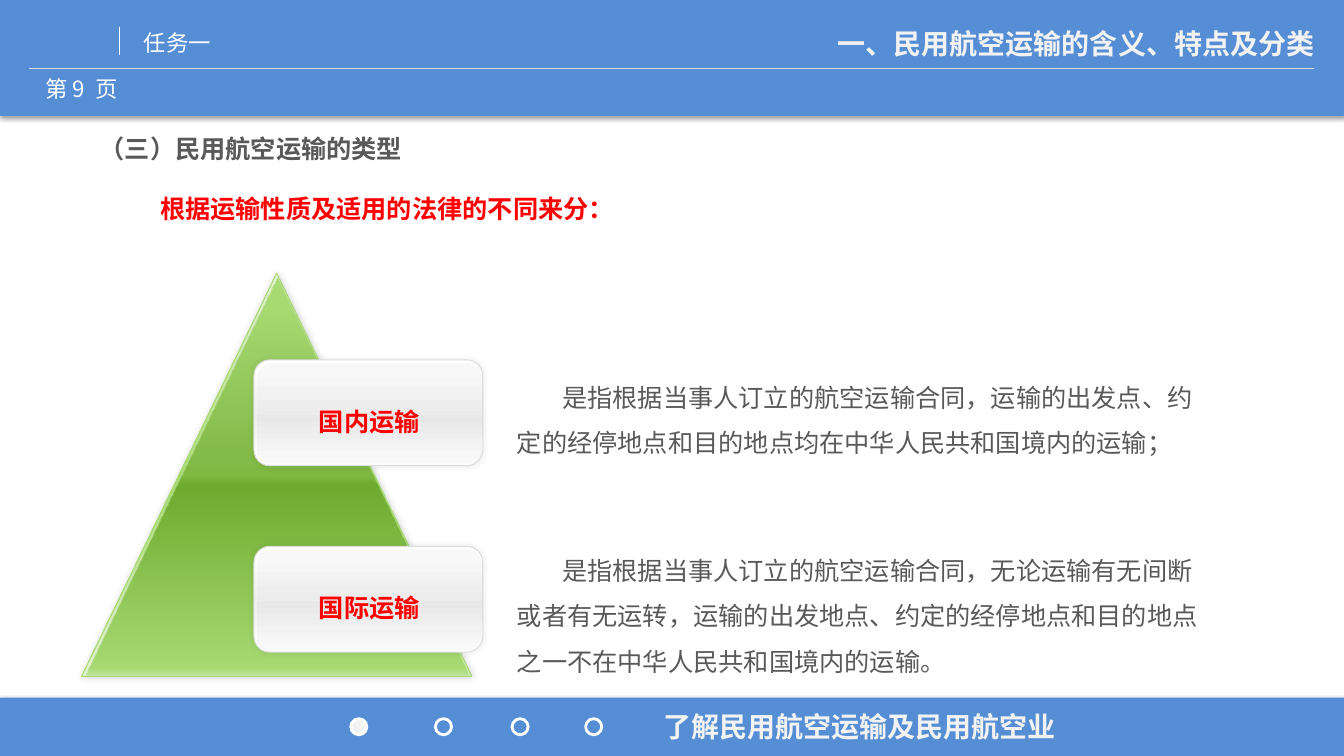
from lxml.etree import SubElement
from pptx import Presentation
from pptx.dml.color import RGBColor
from pptx.enum.shapes import MSO_CONNECTOR as CONNECTOR, MSO_SHAPE as SHAPE
from pptx.enum.text import MSO_ANCHOR as ANCHOR, PP_ALIGN as ALIGN
from pptx.oxml.ns import qn
from pptx.util import Inches, Pt

# Grid of 40 columns by 30 rows
WIDTH, HEIGHT = Inches(13.33), Inches(7.5)
COL, ROW = WIDTH / 40, HEIGHT / 30

BLUE = RGBColor(0x55, 0x8E, 0xD5)
WHITE = RGBColor(0xFF, 0xFF, 0xFF)
OFF_WHITE = RGBColor(0xF2, 0xF2, 0xF2)
RULE_GREY = RGBColor(0xD9, 0xD9, 0xD9)
EDGE_GREY = RGBColor(0xDD, 0xDD, 0xDD)
TEXT_GREY = RGBColor(0x59, 0x59, 0x59)
RED = RGBColor(0xFF, 0x00, 0x00)
BLACK = RGBColor(0x00, 0x00, 0x00)
LIGHT_GREEN = RGBColor(0xA8, 0xDA, 0x73)
DARK_GREEN = RGBColor(0x6D, 0xAA, 0x2D)
PALE_GREEN = RGBColor(0xE2, 0xF3, 0xD0)
BASE_GREEN = RGBColor(0xC5, 0xE6, 0xA2)
SILVERS = [RGBColor(*[level] * 3) for level in (0xF8, 0xEC, 0xE8, 0xF9)]
RIM_GREY = RGBColor(0xF0, 0xF0, 0xF0)

# Gradient stops: position %, colour, opacity %
GREEN_RIM = [(0, PALE_GREEN, 100), (52, LIGHT_GREEN, 100), (100, PALE_GREEN, 100)]
GREEN_FACE = [(8, LIGHT_GREEN, 100), (50, DARK_GREEN, 70), (52, DARK_GREEN, 100),
              (98, LIGHT_GREEN, 100), (100, BASE_GREEN, 100)]
SILVER_RIM = [(0, WHITE, 100), (52, RIM_GREY, 100), (100, WHITE, 100)]
SILVER_FACE = [(place, grey, 100)
               for place, grey in zip((8, 50, 52, 98, 100), SILVERS + [WHITE])]

# Shadows: opacity %, blur pt, distance pt
BAND_SHADOW, TRIANGLE_SHADOW, CARD_SHADOW = (35, 3.1, 1.8), (18, 5, 0), (8, 5, 0)

FONT = "Noto Sans CJK SC"
PARAGRAPH_INDENT = Inches(0.45)
CARD_STEP = 7.4


def grid(col, row, cols, rows):
    return [round(n) for n in (col * COL, row * ROW, cols * COL, rows * ROW)]


def add_color(parent, color, opacity):
    node = SubElement(parent, qn("a:srgbClr"), val=str(color))
    if opacity < 100:
        SubElement(node, qn("a:alpha"), val=str(opacity * 1000))


def add_gradient(shape, stops):
    shape.fill.gradient()
    shape.fill.gradient_angle = 270
    stop_list = shape.element.spPr.find(".//" + qn("a:gsLst"))
    for old in list(stop_list):
        stop_list.remove(old)
    for place, color, opacity in stops:
        stop = SubElement(stop_list, qn("a:gs"), pos=str(place * 1000))
        add_color(stop, color, opacity)


def add_shadow(shape, opacity, blur, distance):
    effects = shape.element.spPr.find(qn("a:effectLst"))
    outer = SubElement(effects, qn("a:outerShdw"), blurRad=str(Pt(blur)),
                       dist=str(Pt(distance)), dir="5400000", rotWithShape="0")
    add_color(outer, BLACK, opacity)


def add_figure(slide, preset, box, fill=None, line=None, line_width=0.75, shadow=None):
    """fill is a colour, a list of gradient stops, or None for hollow."""
    figure = slide.shapes.add_shape(preset, *grid(*box))
    figure.shadow.inherit = False
    if fill is None:
        figure.fill.background()
    elif isinstance(fill, list):
        add_gradient(figure, fill)
    else:
        figure.fill.solid()
        figure.fill.fore_color.rgb = fill
    if line is None:
        figure.line.fill.background()
    else:
        figure.line.color.rgb = line
        figure.line.width = Pt(line_width)
    if shadow:
        add_shadow(figure, *shadow)
    return figure


def add_rule(slide, start, end, color):
    x1, y1, x2, y2 = grid(*start, *end)
    rule = slide.shapes.add_connector(CONNECTOR.STRAIGHT, x1, y1, x2, y2)
    rule.line.color.rgb = color
    rule.line.width = Pt(0.75)
    SubElement(rule.element.spPr, qn("a:effectLst"))


def write(frame, text, size, color, bold=False, align=ALIGN.LEFT, spacing=1.0,
          indent=0, font=FONT):
    paragraph = frame.paragraphs[0]
    run = paragraph.add_run()
    run.text = text
    paragraph.alignment = align
    paragraph.line_spacing = spacing
    paragraph.font.size = Pt(size)
    paragraph.font.bold = bold
    paragraph.font.color.rgb = color
    paragraph.font.name = font
    # East Asian typeface and first-line indent
    SubElement(run.font._element, qn("a:ea"), typeface=FONT)
    run.font.size, run.font.bold, run.font.name = Pt(size), bold, font
    run.font.color.rgb = color
    if indent:
        properties = paragraph._p.get_or_add_pPr()
        properties.set("marL", "0")
        properties.set("indent", str(indent))


def add_text(slide, box, text, size, color, **style):
    frame = slide.shapes.add_textbox(*grid(*box)).text_frame
    frame.word_wrap = True
    write(frame, text, size, color, **style)


def add_card(slide, label, row):
    rim = add_figure(slide, SHAPE.ROUNDED_RECTANGLE, (7.56, row, 6.81, 4.2),
                     SILVER_RIM, EDGE_GREY, shadow=CARD_SHADOW)
    face = add_figure(slide, SHAPE.ROUNDED_RECTANGLE, (7.65, row + 0.12, 6.69, 4.04),
                      SILVER_FACE)
    for layer in (rim, face):
        layer.adjustments[0] = 0.15
    face.text_frame.word_wrap = False
    face.text_frame.vertical_anchor = ANCHOR.MIDDLE
    write(face.text_frame, label, 18, RED, bold=True, align=ALIGN.CENTER,
          spacing=1.5, font="Calibri")


def add_frame(slide):
    # Header and footer bands
    for row, rows in ((0, 4.6), (27.68, 2.32)):
        add_figure(slide, SHAPE.RECTANGLE, (0, row, 40, rows), BLUE, shadow=BAND_SHADOW)
    add_rule(slide, (0.87, 2.72), (39.12, 2.72), RULE_GREY)
    add_rule(slide, (3.57, 1.08), (3.57, 2.2), WHITE)
    # Progress dots, the first one filled
    for dot, col in enumerate((10.44, 12.96, 15.24, 17.43)):
        add_figure(slide, SHAPE.OVAL, (col, 28.52, 0.48, 0.64),
                   None if dot else OFF_WHITE, WHITE, 2)
    add_text(slide, (19.44, 27.96, 13.92, 1.76), "了解民用航空运输及民用航空业",
             20, OFF_WHITE, bold=True)
    add_text(slide, (0.63, 2.8, 3.6, 1.6), "第 9  页", 16, WHITE, align=ALIGN.CENTER)
    add_text(slide, (3.99, 0.96, 9.78, 1.48), "任务一", 16, WHITE)
    add_text(slide, (24.27, 0.84, 15.15, 1.76), "一、民用航空运输的含义、特点及分类",
             20, OFF_WHITE, bold=True, align=ALIGN.RIGHT)


def main():
    deck = Presentation()
    deck.slide_width, deck.slide_height = WIDTH, HEIGHT
    slide = deck.slides.add_slide(deck.slide_layouts[6])
    add_frame(slide)

    # Headings
    add_text(slide, (2.67, 4.68, 11.73, 1.88), "（三）民用航空运输的类型",
             18, TEXT_GREY, bold=True, spacing=1.35)
    add_text(slide, (3.12, 6.88, 16.89, 2), "根据运输性质及适用的法律的不同来分：",
             18, RED, bold=True, spacing=1.5, indent=PARAGRAPH_INDENT)

    # Triangle with the two kinds of transport
    add_figure(slide, SHAPE.ISOSCELES_TRIANGLE, (2.43, 10.84, 11.61, 16),
               GREEN_RIM, LIGHT_GREEN, shadow=TRIANGLE_SHADOW)
    add_figure(slide, SHAPE.ISOSCELES_TRIANGLE, (2.55, 11.04, 11.43, 15.76), GREEN_FACE)
    for step, label in enumerate(("国内运输", "国际运输")):
        add_card(slide, label, 14.28 + step * CARD_STEP)

    # Definitions
    definitions = (
        (14.36, 3.84, "是指根据当事人订立的航空运输合同，运输的出发点、约定的经停地点"
                      "和目的地点均在中华人民共和国境内的运输；"),
        (21.24, 5.64, "是指根据当事人订立的航空运输合同，无论运输有无间断或者有无运转，"
                      "运输的出发地点、约定的经停地点和目的地点之一不在中华人民共和国境内的运输。"),
    )
    for row, rows, definition in definitions:
        add_text(slide, (15.09, row, 21.33, rows), definition, 18, TEXT_GREY,
                 spacing=1.5, indent=PARAGRAPH_INDENT)

    deck.save("out.pptx")


if __name__ == "__main__":
    main()
